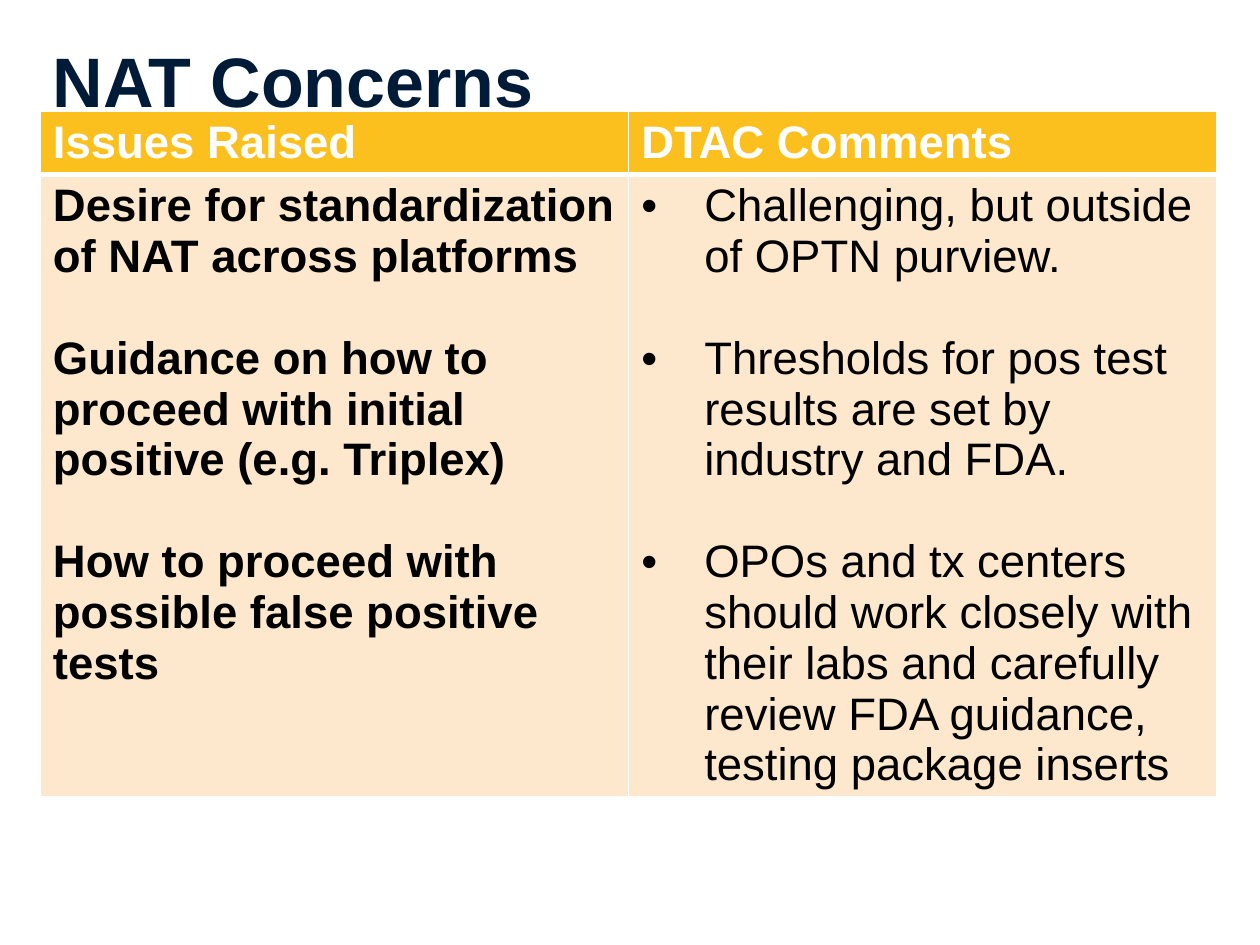
from dataclasses import dataclass

import pptx
import pptx.dml.color
import pptx.enum.text
import pptx.oxml.ns
import pptx.util
from lxml import etree
from pptx.util import Inches, Pt


@dataclass(frozen=True)
class Theme:
    font: str = "Arial"
    navy: str = "001B37"
    white: str = "FFFFFF"
    black: str = "000000"
    gold: str = "FBC01E"
    cream: str = "FDE8CD"
    title_size: int = 40
    table_size: int = 26
    entry_gap: int = 29  # one line of table text


@dataclass(frozen=True)
class CellStyle:
    fill: str
    color: str
    bold: bool = True
    bulleted: bool = False
    bottom_border: int = 1


@dataclass(frozen=True)
class Column:
    heading: str
    entries: tuple[str, ...]
    style: CellStyle


THEME = Theme()
HEADING = CellStyle(THEME.gold, THEME.white, bottom_border=3)
COLUMNS = (
    Column("Issues Raised", (
        "Desire for standardization of NAT across platforms",
        "Guidance on how to proceed with initial positive (e.g. Triplex)",
        "How to proceed with possible false positive tests",
    ), CellStyle(THEME.cream, THEME.black)),
    Column("DTAC Comments", (
        "Challenging, but outside of OPTN purview.",
        "Thresholds for pos test results are set by industry and FDA.",
        "OPOs and tx centers should work closely with their labs and "
        "carefully review FDA guidance, testing package inserts",
    ), CellStyle(THEME.cream, THEME.black, bold=False, bulleted=True)),
)


def rgb(color: str) -> pptx.dml.color.RGBColor:
    return pptx.dml.color.RGBColor.from_string(color)


def add_run(paragraph, text: str, size: int, color: str, bold: bool) -> None:
    run = paragraph.add_run()
    run.text = text
    run.font.name = THEME.font
    run.font.size = Pt(size)
    run.font.bold = bold
    run.font.color.rgb = rgb(color)


def add_bullet(paragraph) -> None:
    properties = paragraph._p.get_or_add_pPr()
    properties.set("marL", str(Inches(0.5)))
    properties.set("indent", str(Inches(-0.5)))
    for tag, key, value in (("a:buFont", "typeface", THEME.font),
                            ("a:buChar", "char", "•")):
        bullet = etree.SubElement(properties, pptx.oxml.ns.qn(tag))
        bullet.set(key, value)


def add_borders(cell, bottom: int) -> None:
    properties = cell._tc.get_or_add_tcPr()
    widths = {"a:lnL": 1, "a:lnR": 1, "a:lnT": 1, "a:lnB": bottom}
    for position, (tag, width) in enumerate(widths.items()):
        border = etree.Element(pptx.oxml.ns.qn(tag), w=str(Pt(width)))
        fill = etree.SubElement(border, pptx.oxml.ns.qn("a:solidFill"))
        etree.SubElement(fill, pptx.oxml.ns.qn("a:srgbClr"), val=THEME.white)
        properties.insert(position, border)


def fill_cell(cell, entries: tuple[str, ...], style: CellStyle) -> None:
    cell.fill.solid()
    cell.fill.fore_color.rgb = rgb(style.fill)
    add_borders(cell, style.bottom_border)
    for index, entry in enumerate(entries):
        frame = cell.text_frame
        paragraph = frame.add_paragraph() if index else frame.paragraphs[0]
        if style.bulleted:
            add_bullet(paragraph)
        if index:
            paragraph.space_before = Pt(THEME.entry_gap)
        add_run(paragraph, entry, THEME.table_size, style.color, style.bold)


def add_title(slide, text: str) -> None:
    title = slide.shapes.title
    title.left, title.top = Inches(0.32), Inches(0.17)
    title.width, title.height = Inches(9.56), Inches(0.93)
    frame = title.text_frame
    frame.auto_size = pptx.enum.text.MSO_AUTO_SIZE.NONE
    frame.vertical_anchor = pptx.enum.text.MSO_ANCHOR.MIDDLE
    paragraph = frame.paragraphs[0]
    paragraph.alignment = pptx.enum.text.PP_ALIGN.LEFT
    add_run(paragraph, text, THEME.title_size, THEME.navy, True)


def add_concerns_table(slide, columns: tuple[Column, ...]) -> None:
    heading_height, body_height = Inches(0.5), Inches(4.94)
    concerns = slide.shapes.add_table(
        2, len(columns), Inches(0.32), Inches(0.88),
        Inches(9.34), heading_height + body_height).table
    concerns.rows[0].height = heading_height
    concerns.rows[1].height = body_height
    for index, column in enumerate(columns):
        fill_cell(concerns.cell(0, index), (column.heading,), HEADING)
        fill_cell(concerns.cell(1, index), column.entries, column.style)


def main() -> None:
    deck = pptx.Presentation()
    deck.slide_width, deck.slide_height = Inches(10), Inches(7.5)
    slide = deck.slides.add_slide(deck.slide_layouts[5])  # title only

    # Heading
    add_title(slide, "NAT Concerns")

    # Issues and the committee's comments, side by side
    add_concerns_table(slide, COLUMNS)

    deck.save("out.pptx")


if __name__ == "__main__":
    main()
